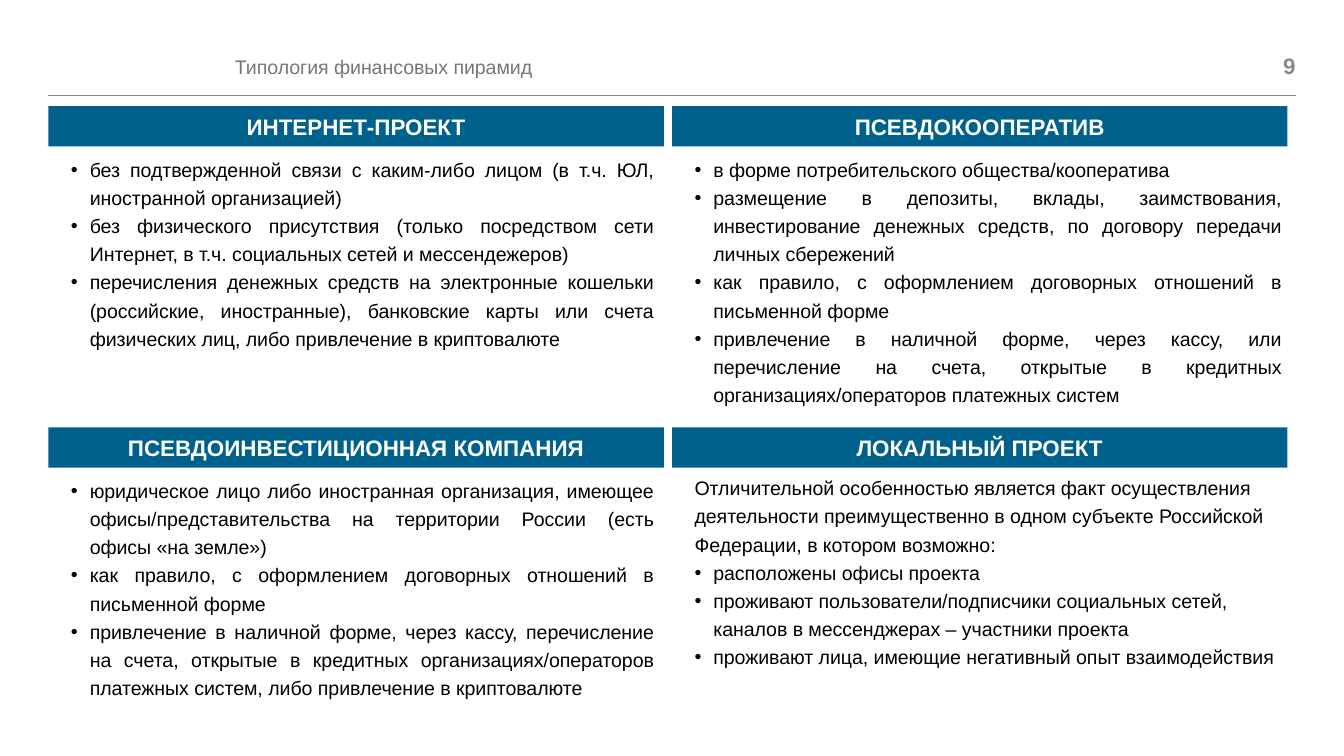
from lxml import etree
from pptx import Presentation
from pptx import util as u
from pptx.dml.color import RGBColor
from pptx.enum import shapes, text
from pptx.oxml.ns import qn

WHITE = RGBColor(0xFF, 0xFF, 0xFF)
BLACK = RGBColor(0, 0, 0)
BLUE = RGBColor(0x00, 0x61, 0x8C)
GRAY = RGBColor(0x88, 0x8A, 0x8D)
TITLE_GRAY = RGBColor(0x75, 0x77, 0x7B)

LEFT, RIGHT = 0.36, 9.64
HEADING_WIDTH, HEADING_HEIGHT = 4.58, 0.3

# Left, top, body top offset, body width, body height, heading, intro, bullets
PANELS = [
    (LEFT, 0.79, 0.3, 4.61, 2.04, "ИНТЕРНЕТ-ПРОЕКТ", None, [
        "без подтвержденной связи с каким-либо лицом (в т.ч. ЮЛ, иностранной организацией)",
        "без физического присутствия (только посредством сети Интернет, "
        "в т.ч. социальных сетей и мессендежеров)",
        "перечисления денежных средств на электронные кошельки (российские, иностранные), "
        "банковские карты или счета физических лиц, либо привлечение в криптовалюте",
    ]),
    (5, 0.79, 0.3, 4.64, 2.04, "ПСЕВДОКООПЕРАТИВ", None, [
        "в форме потребительского общества/кооператива",
        "размещение в депозиты, вклады, заимствования, инвестирование денежных средств, "
        "по договору передачи личных сбережений",
        "как правило, с оформлением договорных отношений в письменной форме",
        "привлечение в наличной форме, через кассу, или перечисление на счета, "
        "открытые в кредитных организациях/операторов платежных систем",
    ]),
    (LEFT, 3.18, 0.3, 4.61, 1.97, "ПСЕВДОИНВЕСТИЦИОННАЯ КОМПАНИЯ", None, [
        "юридическое лицо либо иностранная организация, имеющее офисы/представительства "
        "на территории России (есть офисы «на земле»)",
        "как правило, с оформлением договорных отношений в письменной форме",
        "привлечение в наличной форме, через кассу, перечисление на счета, открытые в кредитных "
        "организациях/операторов платежных систем, либо привлечение в криптовалюте",
    ]),
    (5, 3.18, 0.28, 4.64, 1.99, "ЛОКАЛЬНЫЙ ПРОЕКТ",
     "Отличительной особенностью является факт осуществления деятельности преимущественно "
     "в одном субъекте Российской Федерации, в котором возможно:", [
        "расположены офисы проекта",
        "проживают пользователи/подписчики социальных сетей, каналов в мессенджерах – "
        "участники проекта",
        "проживают лица, имеющие негативный опыт взаимодействия",
    ]),
]


def style(para, size, color, bold=False):
    para.font.name = "Arial"
    para.font.size = u.Pt(size)
    para.font.color.rgb = color
    para.font.bold = bold


def add_rect(page, left, top, width, height, fill):
    box = page.shapes.add_shape(shapes.MSO_SHAPE.RECTANGLE, u.Inches(left), u.Inches(top),
                                u.Inches(width), u.Inches(height))
    box.shadow.inherit = False
    box.fill.solid()
    box.fill.fore_color.rgb = fill
    box.line.fill.background()
    return box


def add_label(page, left, top, width, height, wording):
    box = page.shapes.add_textbox(u.Inches(left), u.Inches(top),
                                  u.Inches(width), u.Inches(height))
    box.text_frame.word_wrap = True
    box.text_frame.text = wording
    return box.text_frame


def set_indent(para, bullet):
    """Set the hanging indent, bullet and tab stop of a body paragraph."""
    props = para._p.get_or_add_pPr()
    props.set("marL", str(u.Inches(0.21 if bullet else 0.07)))
    props.set("indent", str(u.Inches(-0.14 if bullet else 0)))
    if bullet:
        etree.SubElement(props, qn("a:buFont"), typeface="Arial")
        etree.SubElement(props, qn("a:buChar"), char="•")
    else:
        etree.SubElement(props, qn("a:buNone"))
    tabs = etree.SubElement(props, qn("a:tabLst"))
    etree.SubElement(tabs, qn("a:tab"), pos=str(u.Inches(0.3)), algn="l")


def add_header(page, left, top, right):
    # Title
    frame = add_label(page, left + 1.29, top + 0.01, 4.71, 0.28, "Типология финансовых пирамид")
    style(frame.paragraphs[0], 10.5, TITLE_GRAY)

    # Page number
    frame = add_label(page, right - 0.61, top, 0.61, 0.27, "9")
    frame.margin_left = frame.margin_right = frame.margin_top = frame.margin_bottom = 0
    frame.vertical_anchor = text.MSO_ANCHOR.MIDDLE
    frame.paragraphs[0].alignment = text.PP_ALIGN.RIGHT
    style(frame.paragraphs[0], 12, GRAY, bold=True)

    # Rule
    y = u.Inches(top + 0.36)
    rule = page.shapes.add_connector(shapes.MSO_CONNECTOR.STRAIGHT,
                                     u.Inches(left), y, u.Inches(right), y)
    rule.line.color.rgb = GRAY
    rule.line.width = u.Pt(0.5)
    etree.SubElement(rule._element.spPr, qn("a:effectLst"))


def add_panel(page, left, top, offset, width, height, heading, intro, bullets):
    # Body
    frame = add_rect(page, left, top + offset, width, height, WHITE).text_frame
    frame.word_wrap = True
    frame.vertical_anchor = text.MSO_ANCHOR.TOP
    lines = ([intro] if intro else []) + bullets
    for index, line in enumerate(lines):
        para = frame.add_paragraph() if index else frame.paragraphs[0]
        para.text = line
        para.level = 1
        set_indent(para, bullet=line != intro)
        para.alignment = text.PP_ALIGN.LEFT if intro else text.PP_ALIGN.JUSTIFY
        para.line_spacing = 1.2
        style(para, 10.5, BLACK)

    # Heading bar
    frame = add_rect(page, left, top, HEADING_WIDTH, HEADING_HEIGHT, BLUE).text_frame
    frame.word_wrap = True
    frame.vertical_anchor = text.MSO_ANCHOR.MIDDLE
    frame.text = heading
    frame.paragraphs[0].alignment = text.PP_ALIGN.CENTER
    style(frame.paragraphs[0], 12, WHITE, bold=True)


def main():
    deck = Presentation()
    # Widescreen, 16:9
    deck.slide_width = u.Inches(10)
    deck.slide_height = deck.slide_width * 9 // 16
    page = deck.slides.add_slide(deck.slide_layouts[6])
    add_header(page, LEFT, 0.35, RIGHT)
    for panel in PANELS:
        add_panel(page, *panel)
    deck.save("out.pptx")


if __name__ == "__main__":
    main()
